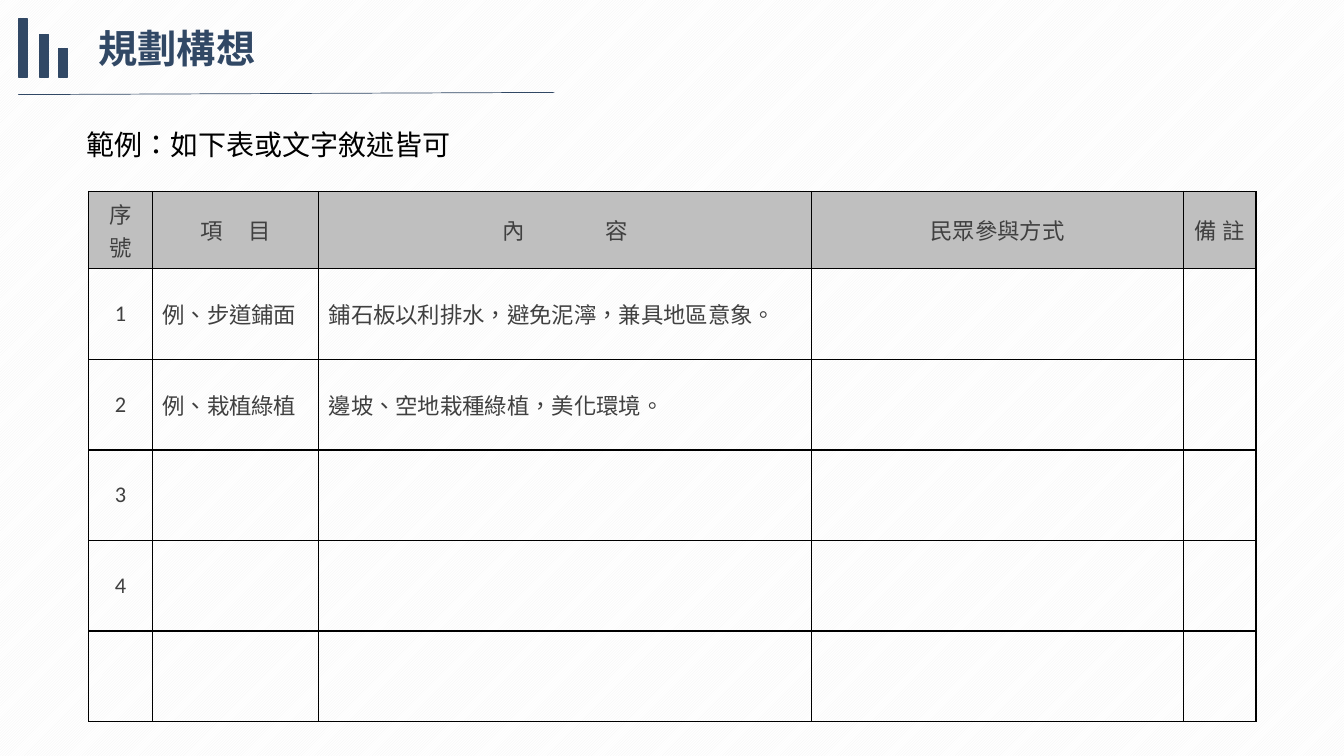
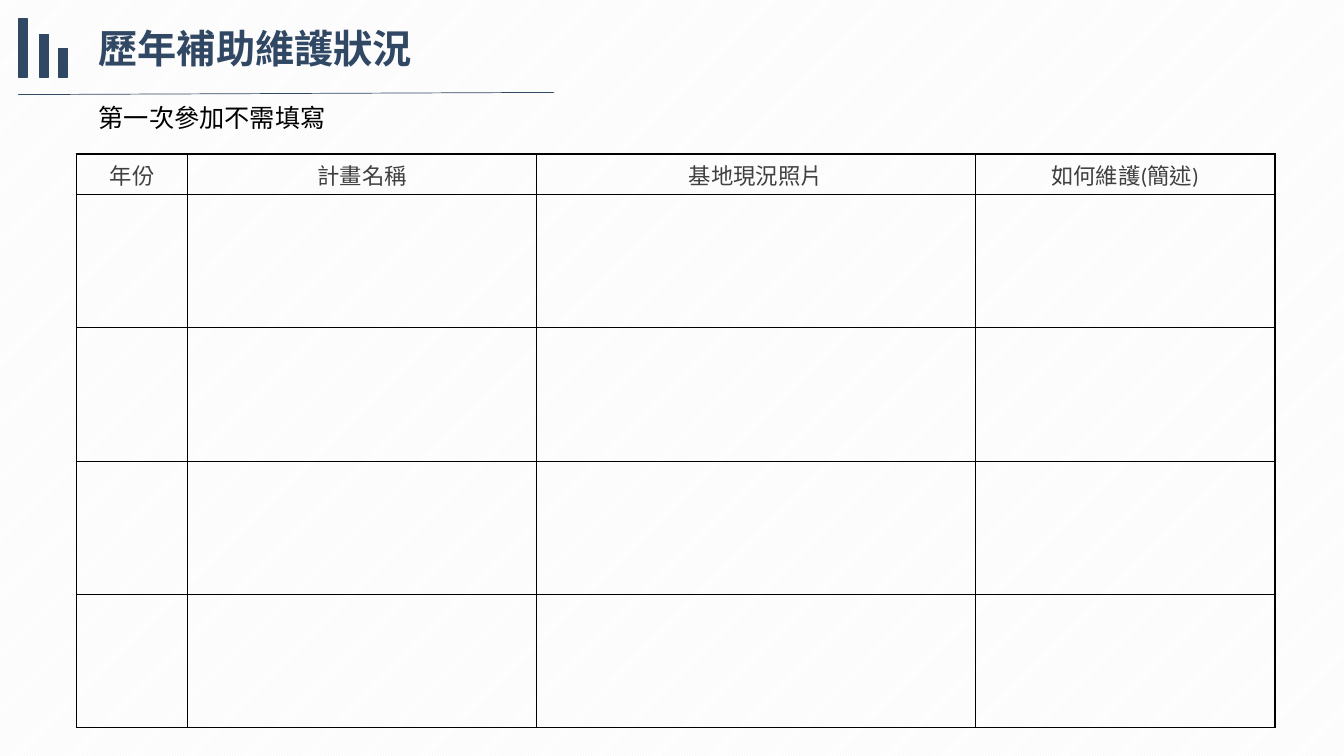
from pptx import Presentation
from pptx.dml.color import RGBColor
from pptx.enum.dml import MSO_PATTERN
from pptx.enum.shapes import MSO_CONNECTOR, MSO_SHAPE
from pptx.enum.text import MSO_ANCHOR, MSO_AUTO_SIZE, PP_ALIGN
from pptx.oxml.ns import qn
from pptx.util import Pt
from lxml.etree import SubElement

NAVY, BLACK, TEXT_GRAY, HEAD_GRAY = "314865", "000000", "404040", "BFBFBF"
WHITE, STRIPE = "FFFFFF", "F2F2F2"

# Header bars: left, top; all stand on the same base
BARS = [(13, 13.7), (28, 24.5), (41.8, 34.6)]
BAR_WIDTH, BAR_BASE = 6.5, 55

# note: text, left, top, width, height, size
# spread: extra letter spacing up to the second word of a heading
SLIDES = [
    {
        "title": "規劃構想",
        "note": ("範例：如下表或文字敘述皆可", 54.7, 87.8, 388, 31.5, 20),
        "at": (63.4, 136.8),
        "cols": [45.4, 118.8, 352.1, 265.7, 51.8],
        "rows": [55.2] + [64.7] * 5,
        "head": ["序號", "項 目", "內 容", "民眾參與方式", "備 註"],
        "spread": {"項 目": 7.2, "內 容": 27},
        "head_fill": HEAD_GRAY,
        "body": [
            ["1", "例、步道鋪面", "鋪石板以利排水，避免泥濘，兼具地區意象。"],
            ["2", "例、栽植綠植", "邊坡、空地栽種綠植，美化環境。"],
            ["3"],
            ["4"],
        ],
    },
    {
        "title": "歷年補助維護狀況",
        "note": ("第一次參加不需填寫", 63.4, 69.8, 353, 29, 18),
        "at": (54.7, 110),
        "cols": [79.2, 249.5, 313.2, 214.2],
        "rows": [29] + [95.2] * 4,
        "head": ["年份", "計畫名稱", "基地現況照片", "如何維護(簡述)"],
        "spread": {},
        "head_fill": None,
        "body": [],
    },
]


def rgb(value):
    return RGBColor.from_string(value)


def style_run(r, size, font, color, bold=False):
    r.font.size, r.font.name, r.font.bold = Pt(size), font, bold
    r.font.color.rgb = rgb(color)
    r.font._element.set("lang", "zh-TW")


def add_text(shapes, text, box, size, font, color, bold=False, align=None):
    tf = shapes.add_textbox(*map(Pt, box)).text_frame
    tf.word_wrap = True
    tf.auto_size = MSO_AUTO_SIZE.SHAPE_TO_FIT_TEXT
    tf.text = text
    p = tf.paragraphs[0]
    p.alignment = align
    style_run(p.runs[0], size, font, color, bold)


def add_header(s, title):
    shapes = s.shapes.add_group_shape().shapes
    rule = shapes.add_connector(MSO_CONNECTOR.STRAIGHT,
                                Pt(13), Pt(67.6), Pt(396), Pt(66))
    rule.line.color.rgb = rgb(NAVY)
    rule.line.width = Pt(0.5)
    SubElement(rule._element.spPr, qn("a:effectLst"))
    add_text(shapes, title, (63.4, 13.7, 332.6, 42.5), 28, "Arial", NAVY,
             bold=True, align=PP_ALIGN.JUSTIFY)
    for left, top in BARS:
        bar = shapes.add_shape(MSO_SHAPE.RECTANGLE, Pt(left), Pt(top),
                               Pt(BAR_WIDTH), Pt(BAR_BASE - top))
        bar.shadow.inherit = False
        bar.fill.solid()
        bar.fill.fore_color.rgb = bar.line.color.rgb = rgb(NAVY)
        bar.line.width = Pt(1)


def style_cell(cell, fill):
    # Borders come before the fill in the cell properties
    tcPr = cell._tc.get_or_add_tcPr()
    for side in ("lnL", "lnR", "lnT", "lnB"):
        ln = SubElement(tcPr, qn("a:" + side), w=str(Pt(1)))
        SubElement(SubElement(ln, qn("a:solidFill")), qn("a:srgbClr"), val=BLACK)
    if fill:
        cell.fill.solid()
        cell.fill.fore_color.rgb = rgb(fill)
    else:
        cell.fill.background()
    cell.vertical_anchor = MSO_ANCHOR.MIDDLE


def fill_cell(cell, text, centered, spread):
    p = cell.text_frame.paragraphs[0]
    p.alignment = PP_ALIGN.CENTER if centered else PP_ALIGN.LEFT
    first, space, second = text.partition(" ")
    for part, gap in ((first + space, spread), (second, 0)):
        if part:
            r = p.add_run()
            r.text = part
            style_run(r, 16, "Calibri", TEXT_GRAY)
            if gap:
                r.font._element.set("spc", str(round(gap * 100)))


def add_grid(s, data):
    cols, rows = data["cols"], data["rows"]
    box = (*data["at"], sum(cols), sum(rows))
    table = s.shapes.add_table(len(rows), len(cols), *map(Pt, box)).table
    table.first_row = table.horz_banding = False
    for col, width in zip(table.columns, cols):
        col.width = Pt(width)
    for row, height in zip(table.rows, rows):
        row.height = Pt(height)
    for i, row in enumerate(table.rows):
        for cell in row.cells:
            style_cell(cell, data["head_fill"] if i == 0 else None)
    for i, texts in enumerate([data["head"]] + data["body"]):
        for j, text in enumerate(texts):
            fill_cell(table.cell(i, j), text, i == 0 or j == 0,
                      data["spread"].get(text, 0))


def main():
    prs = Presentation()
    prs.slide_width, prs.slide_height = Pt(960), Pt(540)

    # Striped background shared by all slides
    bg = prs.slide_master.background.fill
    bg.patterned()
    bg.pattern = MSO_PATTERN.DARK_UPWARD_DIAGONAL
    bg.fore_color.rgb, bg.back_color.rgb = rgb(STRIPE), rgb(WHITE)

    for data in SLIDES:
        s = prs.slides.add_slide(prs.slide_layouts[6])
        add_header(s, data["title"])
        text, *box, size = data["note"]
        add_text(s.shapes, text, box, size, "DejaVu Sans", BLACK)
        add_grid(s, data)
    prs.save("out.pptx")


if __name__ == "__main__":
    main()
